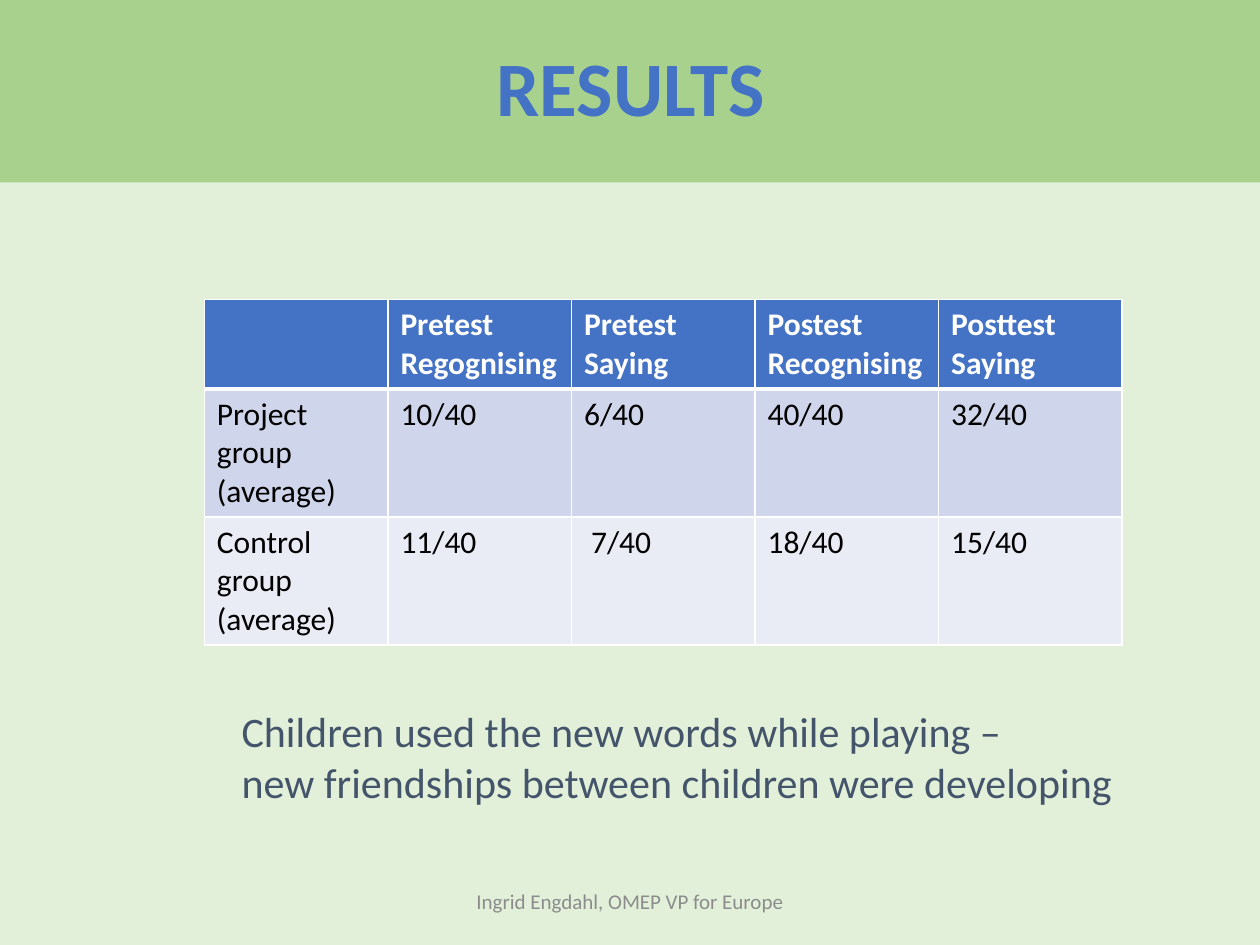
from lxml.etree import SubElement
from pptx import Presentation
from pptx.dml.color import RGBColor
from pptx.enum.shapes import MSO_SHAPE
from pptx.enum.text import MSO_ANCHOR, MSO_AUTO_SIZE, PP_ALIGN
from pptx.oxml.ns import qn
from pptx.util import Cm, Pt

PALE_GREEN = RGBColor(0xE2, 0xF0, 0xD9)
GREEN = RGBColor(0xA9, 0xD1, 0x8E)
BLUE = RGBColor(0x44, 0x72, 0xC4)
SLATE = RGBColor(0x44, 0x54, 0x6A)
GRAY = RGBColor(0x8C, 0x8C, 0x8C)
BLACK = RGBColor(0, 0, 0)
WHITE = RGBColor(0xFF, 0xFF, 0xFF)
BAND_DARK = RGBColor(0xCF, 0xD5, 0xEA)
BAND_LIGHT = RGBColor(0xE9, 0xEB, 0xF5)


def write_lines(text_frame, lines, size, color, bold=False, align=PP_ALIGN.LEFT):
    """Write each line as a paragraph of its own."""
    for index, line in enumerate(lines):
        paragraph = text_frame.paragraphs[0] if index == 0 else text_frame.add_paragraph()
        paragraph.alignment = align
        run = paragraph.add_run()
        run.text = line
        run.font.name = "Calibri"
        run.font.size = Pt(size)
        run.font.bold = bold
        run.font.color.rgb = color


def add_border(cell, side, width):
    properties = cell._tc.get_or_add_tcPr()
    line = SubElement(properties, qn(f"a:ln{side}"), w=str(Pt(width)))
    fill = SubElement(line, qn("a:solidFill"))
    SubElement(fill, qn("a:srgbClr"), val=str(WHITE))


presentation = Presentation()
presentation.slide_width = Cm(25.4)
presentation.slide_height = Cm(19.05)
slide = presentation.slides.add_slide(presentation.slide_layouts[6])
slide.background.fill.solid()
slide.background.fill.fore_color.rgb = PALE_GREEN

# Title band
title = slide.shapes.add_shape(MSO_SHAPE.RECTANGLE, 0, 0, Cm(25.43), Cm(3.68))
title.shadow.inherit = False
title.fill.solid()
title.fill.fore_color.rgb = GREEN
title.line.fill.background()
title.text_frame.vertical_anchor = MSO_ANCHOR.MIDDLE
write_lines(title.text_frame, ["RESULTS"], 44, BLUE, bold=True, align=PP_ALIGN.CENTER)
title.text_frame.paragraphs[0].line_spacing = 0.9

# Results table: each cell is a list of lines
rows = [
    [[], ["Pretest", "Regognising"], ["Pretest", "Saying"],
     ["Postest", "Recognising"], ["Posttest", "Saying"]],
    [["Project group (average)"], ["10/40"], ["6/40"], ["40/40"], ["32/40"]],
    [["Control group (average)"], ["11/40"], [" 7/40"], ["18/40"], ["15/40"]],
]
row_heights = [1.42, 1.9, 1.9]
row_fills = [BLUE, BAND_DARK, BAND_LIGHT]
table = slide.shapes.add_table(
    len(rows), len(rows[0]), Cm(4.12), Cm(6.04), Cm(18.5), Cm(sum(row_heights))
).table
for column in table.columns:
    column.width = Cm(3.7)
for row_index, row in enumerate(rows):
    table.rows[row_index].height = Cm(row_heights[row_index])
    is_header = row_index == 0
    for column_index, lines in enumerate(row):
        cell = table.cell(row_index, column_index)
        add_border(cell, "L", 1)
        add_border(cell, "R", 1)
        add_border(cell, "T", 3 if row_index == 1 else 1)
        add_border(cell, "B", 3 if is_header else 1)
        cell.fill.solid()
        cell.fill.fore_color.rgb = row_fills[row_index]
        write_lines(cell.text_frame, lines, 18, WHITE if is_header else BLACK, bold=is_header)

# Footer
footer = slide.shapes.add_textbox(Cm(8.41), Cm(17.65), Cm(8.58), Cm(1.02))
footer.text_frame.word_wrap = True
footer.text_frame.vertical_anchor = MSO_ANCHOR.MIDDLE
write_lines(footer.text_frame, ["Ingrid Engdahl, OMEP VP for Europe"], 12, GRAY,
            align=PP_ALIGN.CENTER)

# Conclusion
conclusion = slide.shapes.add_textbox(Cm(4.62), Cm(14.1), Cm(18.24), Cm(2.31))
conclusion.text_frame.word_wrap = False
conclusion.text_frame.auto_size = MSO_AUTO_SIZE.SHAPE_TO_FIT_TEXT
write_lines(conclusion.text_frame, [
    "Children used the new words while playing –",
    "new friendships between children were developing",
], 24, SLATE)

presentation.save("out.pptx")
